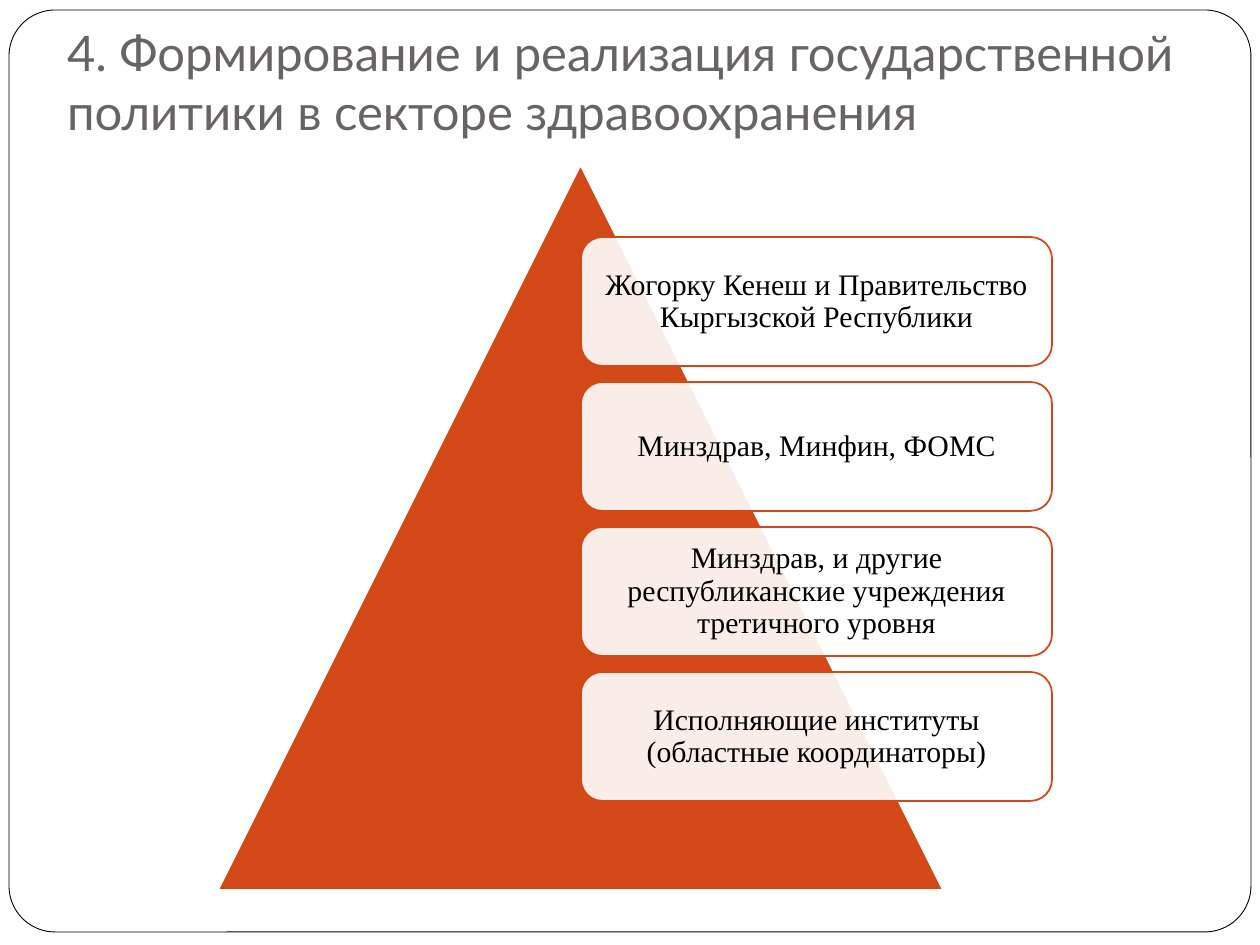
from dataclasses import dataclass

import pptx
import pptx.dml.color
import pptx.enum.shapes
import pptx.enum.text
import pptx.oxml
import pptx.oxml.ns
import pptx.util

EMU_PER_PX = 914400 / 126
SHAPES = pptx.enum.shapes.MSO_SHAPE
ALIGN = pptx.enum.text.PP_ALIGN
ANCHOR = pptx.enum.text.MSO_ANCHOR


@dataclass(frozen=True)
class Theme:
    accent: str = "D34817"
    title: str = "696464"
    text: str = "000000"
    paper: str = "FFFFFF"
    title_font: str = "Lato"
    level_font: str = "Times New Roman"
    title_size: int = 28
    level_size: int = 17
    frame_line: float = 0.5
    shape_line: float = 1
    level_opacity: int = 90


@dataclass(frozen=True)
class Box:
    left: int
    top: int
    width: int
    height: int

    def emu(self) -> list[int]:
        return [px(value) for value in (self.left, self.top, self.width, self.height)]


THEME = Theme()
SLIDE = Box(0, 0, 1260, 945)
FRAME = Box(9, 10, 1242, 922)
TITLE = Box(54, 26, 1171, 127)
PYRAMID = Box(218, 165, 725, 725)
FIRST_LEVEL = Box(581, 237, 471, 129)
LEVEL_STEP = 145
LEVEL_MARGIN = 15
LEVELS = (
    "Жогорку Кенеш и Правительство Кыргызской Республики",
    "Минздрав, Минфин, ФОМС",
    "Минздрав, и другие республиканские учреждения третичного уровня",
    "Исполняющие институты (областные координаторы)",
)


def px(value: int) -> int:
    return round(value * EMU_PER_PX)


def rgb(color: str) -> pptx.dml.color.RGBColor:
    return pptx.dml.color.RGBColor.from_string(color)


def set_font(paragraph, name: str, size: int, color: str) -> None:
    paragraph.font.name = name
    paragraph.font.size = pptx.util.Pt(size)
    paragraph.font.color.rgb = rgb(color)


def set_margins(text_frame, left: int, top: int, right: int, bottom: int) -> None:
    text_frame.margin_left, text_frame.margin_top = px(left), px(top)
    text_frame.margin_right, text_frame.margin_bottom = px(right), px(bottom)


def add_shape(slide, kind, box: Box, fill: str | None, line: str, line_width: float):
    shape = slide.shapes.add_shape(kind, *box.emu())
    shape.shadow.inherit = False
    if fill is None:
        shape.fill.background()
    else:
        shape.fill.solid()
        shape.fill.fore_color.rgb = rgb(fill)
    shape.line.color.rgb = rgb(line)
    shape.line.width = pptx.util.Pt(line_width)
    return shape


def set_opacity(shape, percent: int) -> None:
    color = shape.fill._xPr.find(".//" + pptx.oxml.ns.qn("a:srgbClr"))
    alpha = pptx.oxml.parse_xml(
        f'<a:alpha {pptx.oxml.ns.nsdecls("a")} val="{percent * 1000}"/>'
    )
    color.append(alpha)


def add_title(slide, text: str) -> None:
    title = slide.shapes.title
    title.left, title.top, title.width, title.height = TITLE.emu()
    text_frame = title.text_frame
    text_frame.text = text
    text_frame.word_wrap = True
    text_frame.auto_size = pptx.enum.text.MSO_AUTO_SIZE.NONE
    text_frame.vertical_anchor = ANCHOR.BOTTOM
    set_margins(text_frame, 13, 6, 13, 13)
    paragraph = text_frame.paragraphs[0]
    paragraph.alignment = ALIGN.LEFT
    set_font(paragraph, THEME.title_font, THEME.title_size, THEME.title)


def add_level(slide, index: int, text: str) -> None:
    box = Box(
        FIRST_LEVEL.left,
        FIRST_LEVEL.top + index * LEVEL_STEP,
        FIRST_LEVEL.width,
        FIRST_LEVEL.height,
    )
    level = add_shape(
        slide, SHAPES.ROUNDED_RECTANGLE, box, THEME.paper, THEME.accent, THEME.shape_line
    )
    set_opacity(level, THEME.level_opacity)
    text_frame = level.text_frame
    text_frame.text = text
    text_frame.word_wrap = True
    text_frame.vertical_anchor = ANCHOR.MIDDLE
    set_margins(text_frame, *[LEVEL_MARGIN] * 4)
    paragraph = text_frame.paragraphs[0]
    paragraph.alignment = ALIGN.CENTER
    paragraph.line_spacing = 0.9
    set_font(paragraph, THEME.level_font, THEME.level_size, THEME.text)


def main() -> None:
    presentation = pptx.Presentation()
    presentation.slide_width = px(SLIDE.width)
    presentation.slide_height = px(SLIDE.height)
    slide = presentation.slides.add_slide(presentation.slide_layouts[5])

    frame = add_shape(
        slide, SHAPES.ROUNDED_RECTANGLE, FRAME, None, THEME.text, THEME.frame_line
    )
    frame.adjustments[0] = 0.05
    add_title(slide, "4. Формирование и реализация государственной политики в секторе здравоохранения")
    add_shape(
        slide, SHAPES.ISOSCELES_TRIANGLE, PYRAMID, THEME.accent, THEME.paper, THEME.shape_line
    )
    for index, text in enumerate(LEVELS):
        add_level(slide, index, text)

    presentation.save("out.pptx")


if __name__ == "__main__":
    main()
